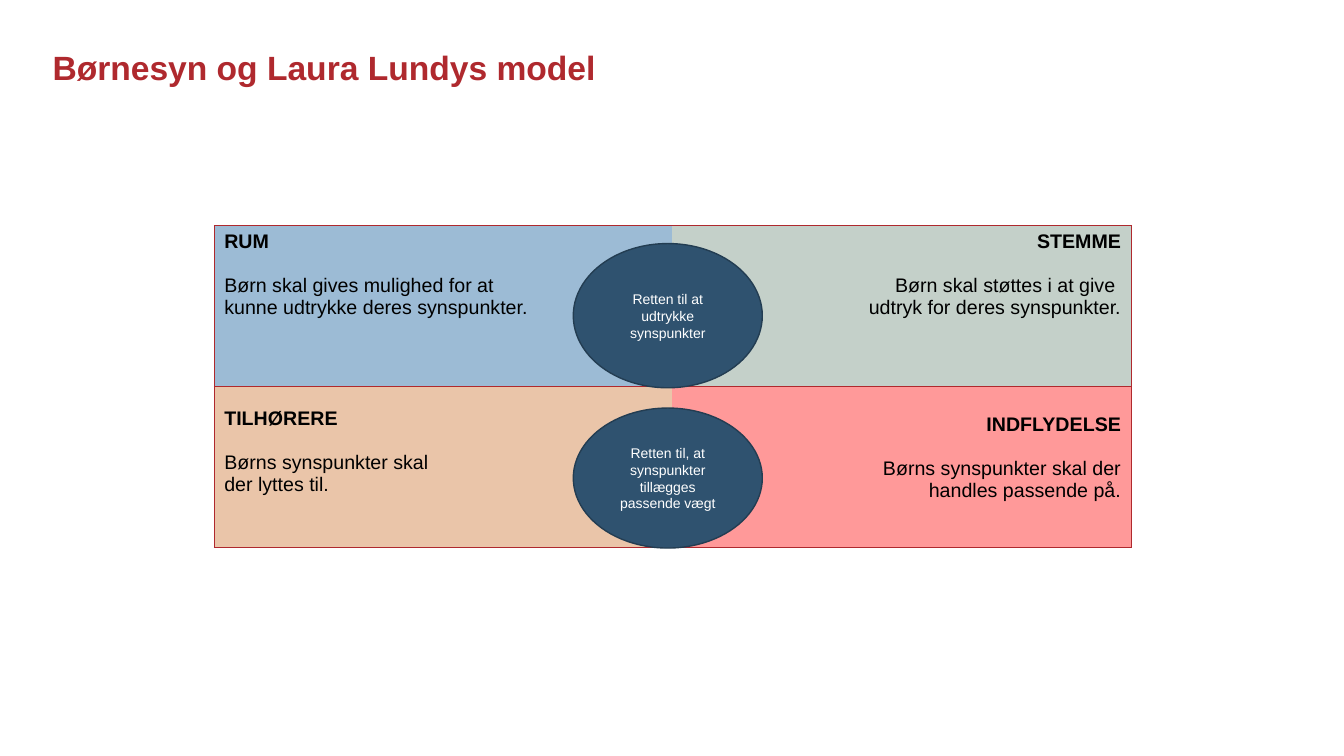
from lxml import etree
from pptx import Presentation
from pptx.dml.color import RGBColor
from pptx.enum.shapes import MSO_SHAPE
from pptx.enum.text import MSO_ANCHOR, PP_ALIGN
from pptx.oxml.ns import qn
from pptx.util import Pt

OVAL = MSO_SHAPE.OVAL
TOP, MIDDLE = MSO_ANCHOR.TOP, MSO_ANCHOR.MIDDLE
LEFT, CENTER, RIGHT = PP_ALIGN.LEFT, PP_ALIGN.CENTER, PP_ALIGN.RIGHT

COLORS = {
    "red": "AF292E", "blue": "9CBBD5", "green": "C4D0C9", "sand": "EAC5A9",
    "pink": "FF9999", "navy": "2F526F", "edge": "233D52",
    "black": "000000", "white": "FFFFFF",
}


def rgb(name):
    return RGBColor.from_string(COLORS[name])


def write(par, text, color, align, **font):
    par.alignment = align
    run = par.add_run()
    run.text = text
    run.font.color.rgb = rgb(color)
    for key, value in {"name": "Arial", **font}.items():
        setattr(run.font, key, value)


deck = Presentation()
deck.slide_width, deck.slide_height = Pt(960), Pt(540)
slide = deck.slides.add_slide(deck.slide_layouts[5])

title = slide.shapes.title
title.left, title.top, title.width, title.height = Pt(37.5), Pt(36.5), Pt(652), Pt(60)
frame = title.text_frame
frame.vertical_anchor = TOP
for side in ("left", "top", "right", "bottom"):
    setattr(frame, f"margin_{side}", 0)
write(frame.paragraphs[0], "Børnesyn og Laura Lundys model", "red", LEFT,
      size=Pt(24), bold=True)
frame.paragraphs[0].line_spacing = 0.9

table = slide.shapes.add_table(2, 2, Pt(153), Pt(161), Pt(655), Pt(230)).table
table.first_row = table.horz_banding = False
for col, width in zip(table.columns, (327, 328)):
    col.width = Pt(width)
for row in table.rows:
    row.height = Pt(115)

FIELDS = [
    (0, 0, "blue", 3.6, "RUM",
     ["Børn skal gives mulighed for at", "kunne udtrykke deres synspunkter."]),
    (0, 1, "green", 3.6, "STEMME",
     ["Børn skal støttes i at give ", "udtryk for deres synspunkter."]),
    (1, 0, "sand", 15, "TILHØRERE",
     ["Børns synspunkter skal", "der lyttes til."]),
    (1, 1, "pink", 19.5, "INDFLYDELSE",
     ["Børns synspunkter skal der", "handles passende på."]),
]
for row, col, color, margin, head, body in FIELDS:
    cell = table.cell(row, col)
    cell.margin_top = Pt(margin)
    props = cell._tc.get_or_add_tcPr()
    for side, shown in (("L", col == 0), ("R", col == 1), ("T", True), ("B", True)):
        line = etree.SubElement(props, qn(f"a:ln{side}"), w=str(Pt(0.5)))
        if shown:
            fill = etree.SubElement(line, qn("a:solidFill"))
            etree.SubElement(fill, qn("a:srgbClr"), val=COLORS["red"])
        else:
            etree.SubElement(line, qn("a:noFill"))
    cell.fill.solid()
    cell.fill.fore_color.rgb = rgb(color)
    frame = cell.text_frame
    for i, text in enumerate([head, *body]):
        par = frame.add_paragraph() if i else frame.paragraphs[0]
        write(par, text, "black", (LEFT, RIGHT)[col], size=Pt(14), bold=i == 0)
    frame.paragraphs[0].space_after = Pt(16)

RIGHTS = [
    (174, 103, "Retten til at udtrykke synspunkter"),
    (291.5, 100, "Retten til, at synspunkter tillægges passende vægt"),
]
for top, height, text in RIGHTS:
    oval = slide.shapes.add_shape(OVAL, Pt(409.5), Pt(top), Pt(135), Pt(height))
    oval.shadow.inherit = False
    oval.fill.solid()
    oval.fill.fore_color.rgb = rgb("navy")
    oval.line.color.rgb = rgb("edge")
    oval.line.width = Pt(1)
    frame = oval.text_frame
    frame.word_wrap = True
    frame.vertical_anchor = MIDDLE
    write(frame.paragraphs[0], text, "white", CENTER, size=Pt(10))

deck.save("out.pptx")
